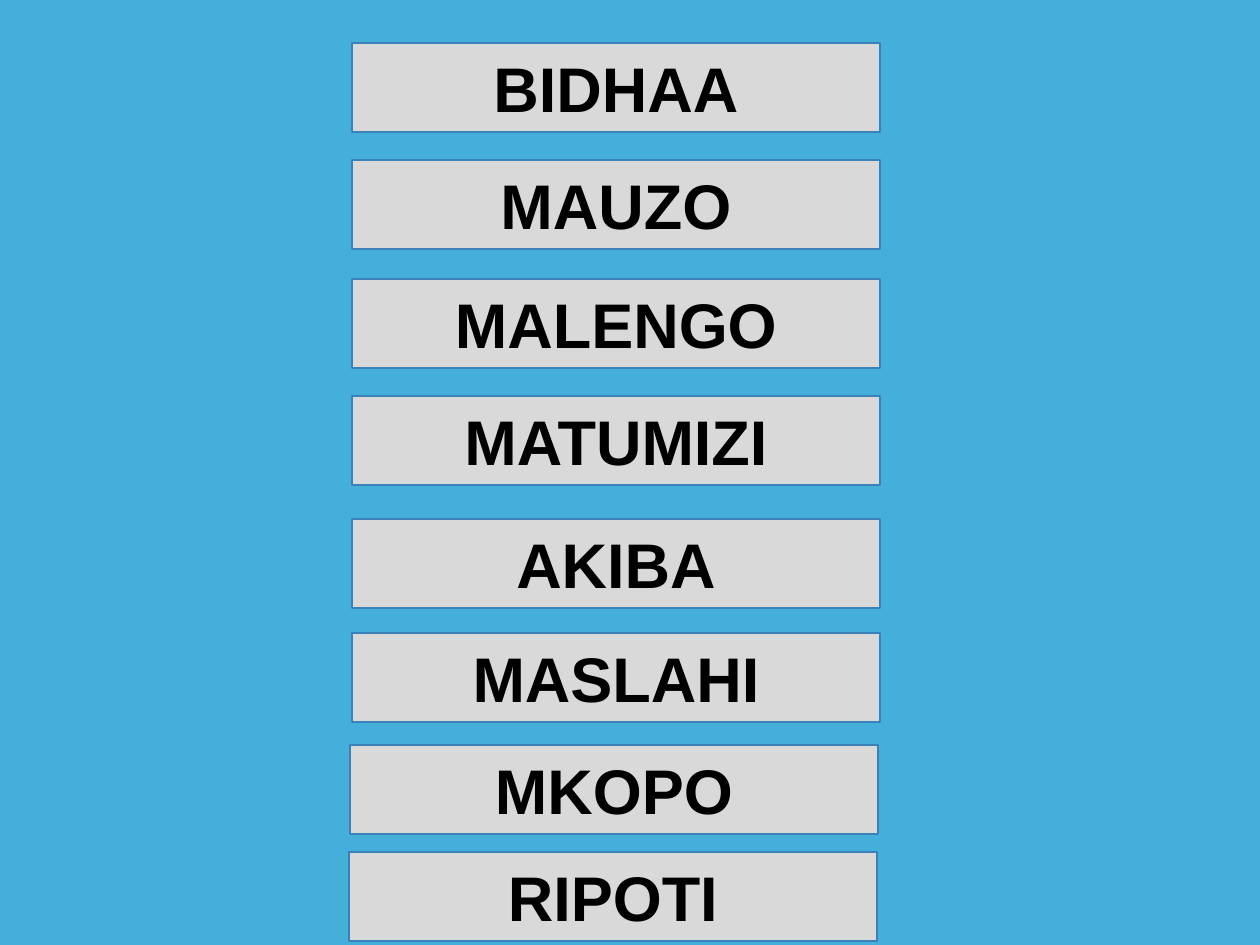
from pptx import Presentation
from pptx import util as u
from pptx.dml.color import RGBColor
from pptx.enum import shapes, text

SCALE = u.Inches(1) / 126
HUES = {"back": "45AFDC", "box": "D9D9D9", "edge": "3A81BA", "ink": "000000"}
FONT = {"name": "Arial", "size": u.Pt(36), "bold": True}
FRAME = {
    "word_wrap": True,
    "vertical_anchor": text.MSO_ANCHOR.MIDDLE,
    "auto_size": text.MSO_AUTO_SIZE.SHAPE_TO_FIT_TEXT,
}
WIDE, HIGH = 528, 89
# Word, left and top in px
TERMS = [
    ("BIDHAA", 352, 43),
    ("MAUZO", 352, 160),
    ("MALENGO", 352, 279),
    ("MATUMIZI", 352, 396),
    ("AKIBA", 352, 519),
    ("MASLAHI", 352, 633),
    ("MKOPO", 350, 745),
    ("RIPOTI", 349, 852),
]


def px(count):
    return u.Emu(round(count * SCALE))


def hue(name):
    return RGBColor.from_string(HUES[name])


def paint(fill, name):
    fill.solid()
    fill.fore_color.rgb = hue(name)


def style(item, values):
    for key, value in values.items():
        setattr(item, key, value)


def add_term(slide, word, left, top):
    box = slide.shapes.add_shape(
        shapes.MSO_SHAPE.RECTANGLE, px(left), px(top), px(WIDE), px(HIGH))
    box.shadow.inherit = False
    paint(box.fill, "box")
    box.line.color.rgb = hue("edge")
    box.line.width = u.Pt(0.75)
    style(box.text_frame, FRAME)
    para = box.text_frame.paragraphs[0]
    para.alignment = text.PP_ALIGN.CENTER
    run = para.add_run()
    run.text = word
    style(run.font, FONT)
    run.font.color.rgb = hue("ink")


def main():
    deck = Presentation()
    deck.slide_width, deck.slide_height = px(1260), px(945)
    slide = deck.slides.add_slide(deck.slide_layouts[6])
    paint(slide.background.fill, "back")
    for term in TERMS:
        add_term(slide, *term)
    deck.save("out.pptx")


if __name__ == "__main__":
    main()
